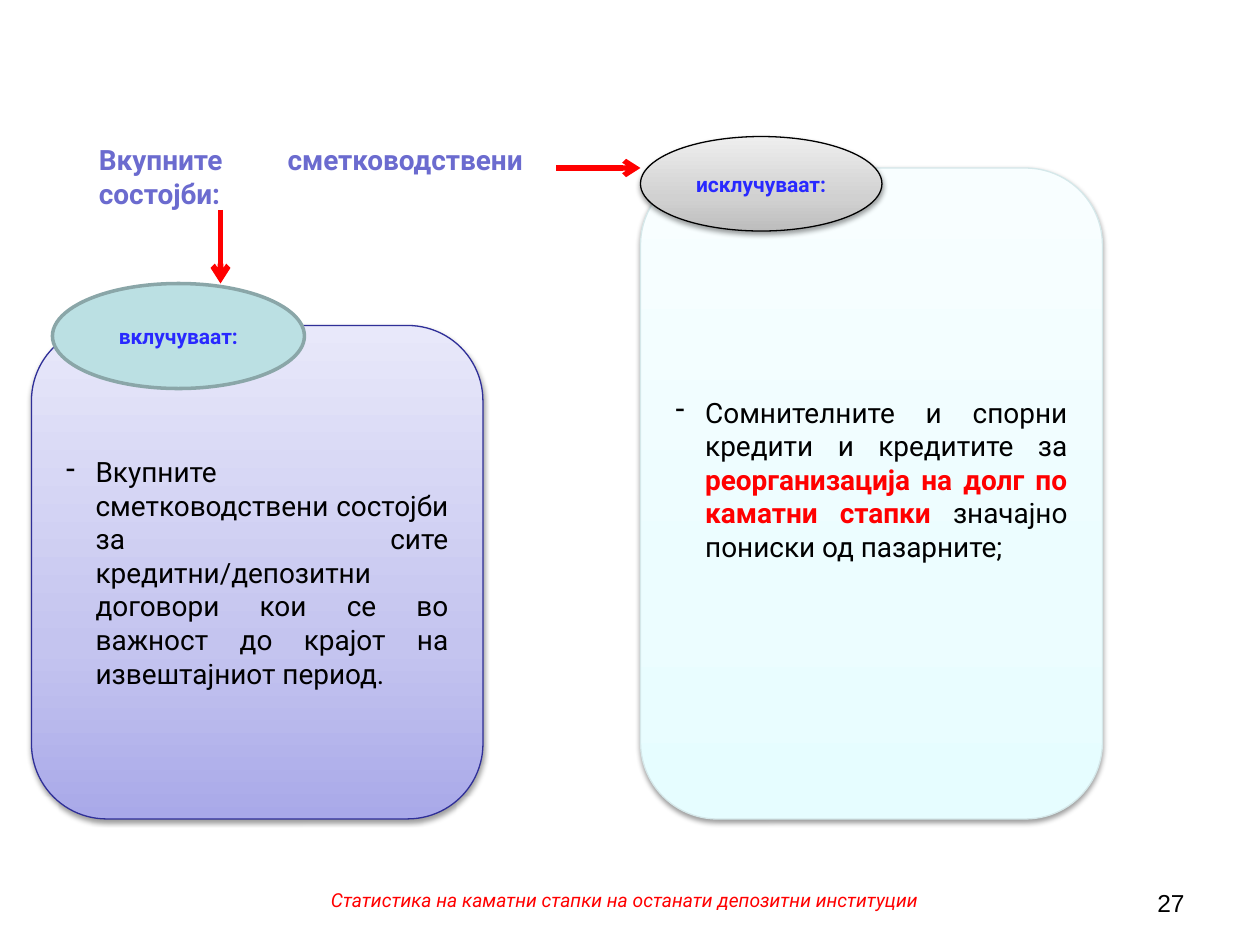
import pptx
import pptx.dml.color
import pptx.enum.shapes
import pptx.enum.text
import pptx.oxml.ns
import pptx.util
from lxml import etree

Pt = pptx.util.Pt
qn = pptx.oxml.ns.qn
SHAPES = pptx.enum.shapes.MSO_SHAPE
ALIGN = pptx.enum.text.PP_ALIGN
ANCHOR = pptx.enum.text.MSO_ANCHOR


def color(value):
    return pptx.dml.color.RGBColor.from_string(value)


def add_element(parent, tag, **attributes):
    element = etree.SubElement(parent, qn(tag))
    for name, value in attributes.items():
        element.set(name, str(value))
    return element


def set_gradient(shape, colors):
    """Run three colours from the bottom of the shape to its top."""
    shape.fill.gradient()
    shape.fill.gradient_angle = 90
    stops = shape._element.spPr.find(qn("a:gradFill")).find(qn("a:gsLst"))
    for stop in list(stops):
        stops.remove(stop)
    for position, value in zip((0, 35, 100), colors):
        stop = add_element(stops, "a:gs", pos=position * 1000)
        add_element(stop, "a:srgbClr", val=value)


def add_shadow(shape):
    effects = shape._element.spPr.find(qn("a:effectLst"))
    shadow = add_element(effects, "a:outerShdw", blurRad=Pt(3.1), dist=Pt(1.6),
                         dir=90 * 60000, rotWithShape=0)
    shade = add_element(shadow, "a:srgbClr", val="000000")
    add_element(shade, "a:alpha", val=38000)


def add_filled_shape(slide, preset, box, fill, line, line_width):
    """A list of fill colours gives a shadowed gradient, a string a flat fill."""
    shape = slide.shapes.add_shape(preset, *map(Pt, box))
    shape.shadow.inherit = False
    if isinstance(fill, str):
        shape.fill.solid()
        shape.fill.fore_color.rgb = color(fill)
    else:
        set_gradient(shape, fill)
        add_shadow(shape)
    shape.line.color.rgb = color(line)
    shape.line.width = Pt(line_width)
    shape.text_frame.word_wrap = True
    return shape


def format_run(run, size, value, bold=False, italic=False, name="Roboto"):
    run.font.size = Pt(size)
    run.font.name = name
    run.font.bold = bold
    run.font.italic = italic
    run.font.color.rgb = color(value)


def write_line(shape, text, align, size, value, **style):
    paragraph = shape.text_frame.paragraphs[0]
    paragraph.text = text
    paragraph.alignment = align
    format_run(paragraph.runs[0], size, value, **style)
    return paragraph


def add_heading(slide, box):
    shape = add_filled_shape(slide, SHAPES.RECTANGLE, box, "FFFFFF", "FFFFFF", 2)
    shape.text_frame.vertical_anchor = ANCHOR.TOP
    shape.text_frame.margin_left = Pt(11.5)
    paragraph = write_line(shape, "Вкупните сметководствени состојби:",
                           ALIGN.JUSTIFY, 16, "6B6BCF", bold=True)
    paragraph._p.get_or_add_pPr().set("marL", str(Pt(27)))


def add_panel(slide, box, fill, line, parts, bottom_margin=3.6):
    """Rounded panel with one dashed item; parts are (text, colour, bold)."""
    shape = add_filled_shape(slide, SHAPES.ROUNDED_RECTANGLE, box, fill, line, 0.75)
    frame = shape.text_frame
    frame.vertical_anchor = ANCHOR.MIDDLE
    frame.margin_bottom = Pt(bottom_margin)
    paragraph = frame.paragraphs[0]
    paragraph.alignment = ALIGN.JUSTIFY
    properties = paragraph._p.get_or_add_pPr()
    properties.set("marL", str(Pt(17)))
    properties.set("indent", str(-Pt(17)))
    add_element(properties, "a:buClr").append(
        etree.Element(qn("a:srgbClr"), val="000000"))
    add_element(properties, "a:buFontTx")
    add_element(properties, "a:buChar", char="-")
    for text, value, bold in parts:
        run = paragraph.add_run()
        run.text = text
        format_run(run, 16, value, bold)


def add_badge(slide, box, text, fill, line, line_width):
    shape = add_filled_shape(slide, SHAPES.OVAL, box, fill, line, line_width)
    shape.text_frame.vertical_anchor = ANCHOR.MIDDLE
    write_line(shape, text, ALIGN.CENTER, 12, "2929FF", bold=True)


def add_included(slide, box):
    left, top, width, height = box
    add_panel(slide, box, ["A9A9E9", "C4C4EF", "E8E8FA"], "2F2F98", [
        ("Вкупните сметководствени состојби за сите кредитни/депозитни договори "
         "кои се во важност до крајот на извештајниот период.", "000000", False)])
    add_badge(slide, (left + 12, top - 24, 144, 60), "вклучуваат:",
              "BBE0E3", "8AA6A8", 2)


def add_excluded(slide, box):
    left, top, width, height = box
    add_panel(slide, box, ["E6FDFF", "ECFDFF", "F8FEFF"], "D5E8EA", [
        ("Сомнителните и спорни кредити и кредитите за ", "000000", False),
        ("реорганизација на долг по каматни стапки ", "FF0000", True),
        ("значајно пониски од пазарните;", "000000", False)], bottom_margin=20)
    add_badge(slide, (left, top - 18, 138, 54), "исклучуваат:",
              ["BDBDBD", "D1D1D1", "EEEEEE"], "000000", 0.75)


def add_arrow(slide, start, end, width):
    arrow = slide.shapes.add_connector(
        pptx.enum.shapes.MSO_CONNECTOR.STRAIGHT, *map(Pt, start + end))
    arrow.line.color.rgb = color("FF0000")
    arrow.line.width = Pt(width)
    add_element(arrow.line._get_or_add_ln(), "a:tailEnd", type="arrow")
    add_element(arrow._element.spPr, "a:effectLst")


def add_footer_text(slide, box, text, align, size, value, **style):
    shape = slide.shapes.add_textbox(*map(Pt, box))
    shape.text_frame.word_wrap = True
    write_line(shape, text, align, size, value, **style)


def add_footer(slide, box):
    left, top, width, height = box
    add_footer_text(slide, (left + 456, top, 168, height), "27",
                    ALIGN.RIGHT, 14, "000000", name="Arial")
    add_footer_text(slide, (left, top, 594, height),
                    "Статистика на каматни стапки на останати депозитни институции",
                    ALIGN.CENTER, 11, "FF0000", italic=True)


def main():
    presentation = pptx.Presentation()
    presentation.slide_width = Pt(720)
    presentation.slide_height = Pt(540)
    slide = presentation.slides.add_slide(presentation.slide_layouts[6])
    add_footer(slide, (60, 504, 624, 25))
    add_included(slide, (18, 186, 258, 282))
    add_excluded(slide, (366, 96, 264, 372))
    add_heading(slide, (18, 78, 288, 48))
    add_arrow(slide, (318, 96), (366, 96), 3)
    add_arrow(slide, (126, 120), (126, 162), 3.25)
    presentation.save("out.pptx")


if __name__ == "__main__":
    main()
